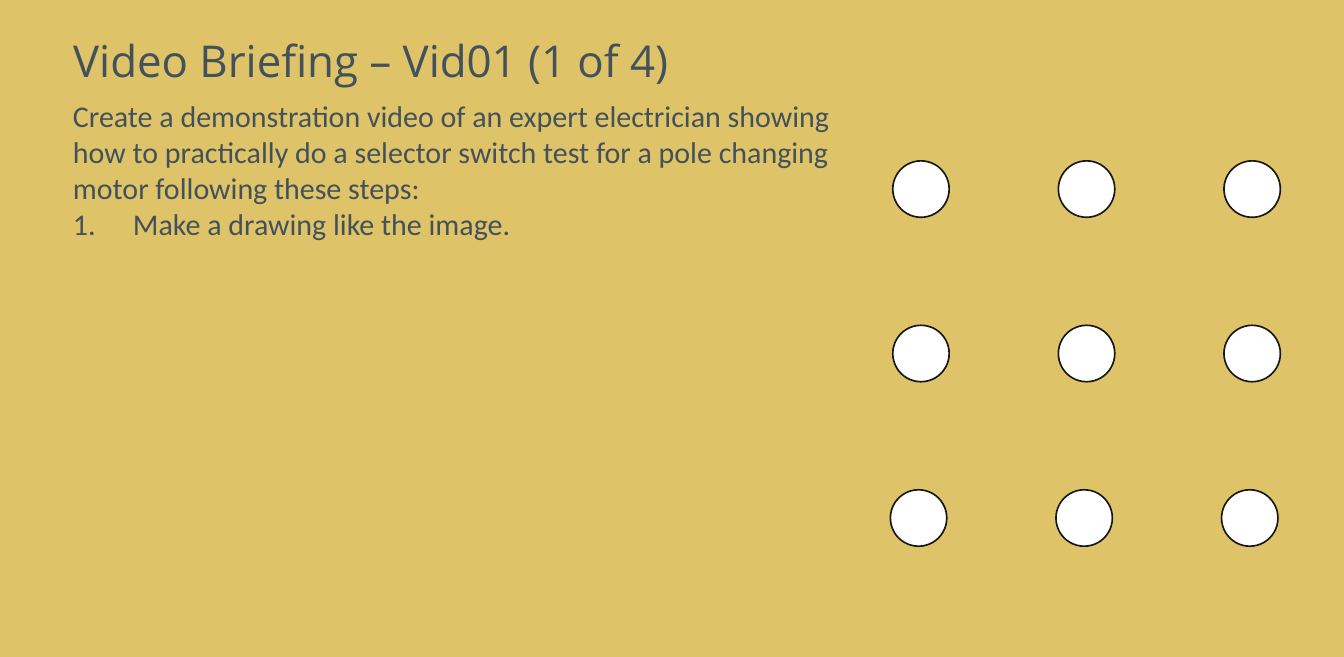
from itertools import product

from lxml import etree
from pptx import Presentation
from pptx import util as u
from pptx.dml.color import RGBColor
from pptx.enum import shapes, text

HUES = {"back": "DEC368", "ink": "43525A", "disc": "FFFFFF", "edge": "181717"}
WIDE, HIGH = u.Inches(11.2), u.Cm(13.9)
LEFT = 0.51
DISC = 0.47
COLS, ROWS = 3, 3
STEP_X, STEP_Y = 1.38, 1.37
STARTS = [7.44, 7.44, 7.42]
TOP = 1.34


def hue(name):
    """Return a named colour."""
    return RGBColor.from_string(HUES[name])


def place(item, *box):
    """Set left, top, width and height in inches."""
    item.left, item.top, item.width, item.height = map(u.Inches, box)


def write(para, words, face, size):
    """Add one run of styled text."""
    run = para.add_run()
    run.text = words
    run.font.name = face
    run.font.size = u.Pt(size)
    run.font.color.rgb = hue("ink")


def number(para, indent):
    """Turn a paragraph into a numbered step."""
    props = para._p.get_or_add_pPr()
    props.set("marL", str(u.Inches(indent)))
    props.set("indent", str(-u.Inches(indent)))
    space = props.nsmap["a"]
    etree.SubElement(props, f"{{{space}}}buFont", typeface="+mj-lt")
    etree.SubElement(props, f"{{{space}}}buAutoNum", type="arabicPeriod")


def head(slide, words):
    """Fill and format the title."""
    title = slide.shapes.title
    place(title, LEFT, 0, 9.66, 1.06)
    frame = title.text_frame
    frame.vertical_anchor = text.MSO_ANCHOR.MIDDLE
    frame.auto_size = text.MSO_AUTO_SIZE.NONE
    para = frame.paragraphs[0]
    para.alignment = text.PP_ALIGN.LEFT
    para.line_spacing = 0.9
    write(para, words, "Open Sans", 26.3)


def brief(slide, intro, steps):
    """Add the introduction and its numbered steps."""
    box = slide.shapes.add_textbox(0, 0, 0, 0)
    place(box, LEFT, 0.76, 6.91, 1.62)
    frame = box.text_frame
    frame.word_wrap = True
    frame.auto_size = text.MSO_AUTO_SIZE.SHAPE_TO_FIT_TEXT
    write(frame.paragraphs[0], intro, "Calibri", 18)
    for step in steps:
        para = frame.add_paragraph()
        para.alignment = text.PP_ALIGN.JUSTIFY
        number(para, 0.5)
        write(para, step, "Calibri", 18)


def disc(group, left, top):
    """Add one outlined disc."""
    dot = group.shapes.add_shape(shapes.MSO_SHAPE.OVAL, 0, 0, 0, 0)
    place(dot, left, top, DISC, DISC)
    dot.shadow.inherit = False
    dot.fill.solid()
    dot.fill.fore_color.rgb = hue("disc")
    dot.line.color.rgb = hue("edge")
    dot.line.width = u.Pt(1)


def grid(slide):
    """Add the grid of discs, one row after another."""
    for row, col in product(range(ROWS), range(COLS)):
        disc(slide, STARTS[row] + col * STEP_X, TOP + row * STEP_Y)


def main():
    """Build and save the slide."""
    deck = Presentation()
    deck.slide_width, deck.slide_height = WIDE, HIGH
    slide = deck.slides.add_slide(deck.slide_layouts.get_by_name("Title Only"))
    slide.background.fill.solid()
    slide.background.fill.fore_color.rgb = hue("back")
    head(slide, "Video Briefing – Vid01 (1 of 4)")
    brief(
        slide,
        "Create a demonstration video of an expert electrician showing how to "
        "practically do a selector switch test for a pole changing motor "
        "following these steps:",
        ["Make a drawing like the image."],
    )
    grid(slide)
    deck.save("out.pptx")


if __name__ == "__main__":
    main()
